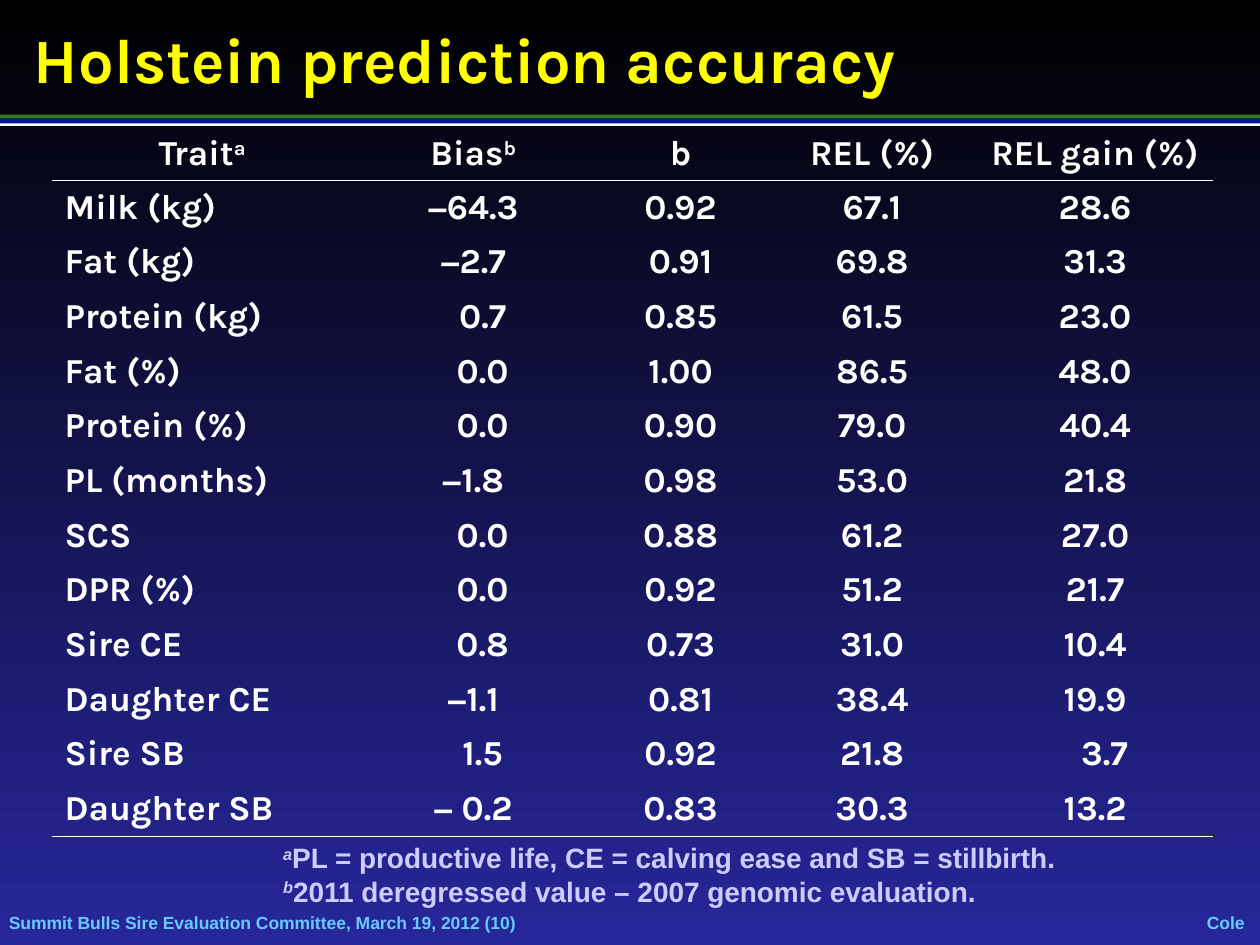
from lxml import etree
from pptx import Presentation
from pptx.dml.color import RGBColor
from pptx.enum import shapes, text
from pptx.oxml import ns
from pptx.util import Cm, Pt

# Content: "^x" at the start of a run marks a superscript
TITLE = "Holstein prediction accuracy"
HEADS = [["Trait", "^a"], ["Bias", "^b"], ["b"], ["REL (%)"], ["REL gain (%)"]]
ROWS = [
    ("Milk (kg)", "−64.3", "0.92", "67.1", "28.6"),
    ("Fat (kg)", "−2.7", "0.91", "69.8", "31.3"),
    ("Protein (kg)", "0.7", "0.85", "61.5", "23.0"),
    ("Fat (%)", "0.0", "1.00", "86.5", "48.0"),
    ("Protein (%)", "0.0", "0.90", "79.0", "40.4"),
    ("PL (months)", "−1.8", "0.98", "53.0", "21.8"),
    ("SCS", "0.0", "0.88", "61.2", "27.0"),
    ("DPR (%)", "0.0", "0.92", "51.2", "21.7"),
    ("Sire CE", "0.8", "0.73", "31.0", "10.4"),
    ("Daughter CE", "−1.1", "0.81", "38.4", "19.9"),
    ("Sire SB", "1.5", "0.92", "21.8", "3.7"),
    ("Daughter SB", "− 0.2", "0.83", "30.3", "13.2"),
]
NOTES = [
    ["^a", "PL = productive life, CE = calving ease and SB = stillbirth."],
    ["^b", "2011 deregressed value – 2007 genomic evaluation."],
]
EVENT = "Summit Bulls Sire Evaluation Committee, March 19, 2012 (10)"
AUTHOR = "Cole"

COLORS = {
    "top": "000000", "base": "27279B", "title": "FFFF00", "cell": "FFFFFF",
    "note": "CCCCFF", "foot": "66CCFF",
    "green": "2A7E00", "white": "FFFFFF", "blue": "001799",
}
BANDS = [("green", 2.31, 0.08), ("white", 2.46, 0.08), ("blue", 2.39, 0.1)]
WIDTHS = [6.05, 4.88, 3.48, 4.24, 4.75]
ROW_H = 1.1
SHIFT = 0.38  # left indent that lines up unsigned and one-digit values
PLAIN = "{2D5ABB26-0587-4C30-8999-92F81FD0307C}"
LEFT, MID = text.PP_ALIGN.LEFT, text.PP_ALIGN.CENTER
BOTTOM, CENTER = text.MSO_ANCHOR.BOTTOM, text.MSO_ANCHOR.MIDDLE


def rgb(name):
    return RGBColor.from_string(COLORS[name])


def write(frame, paras, size, color, font="Arial", align=LEFT, indent=0,
          slant=False):
    """Fill a text frame; each paragraph is a list of runs."""
    for i, runs in enumerate(paras):
        para = frame.paragraphs[0] if i == 0 else frame.add_paragraph()
        para.alignment = align
        if indent:
            para._p.get_or_add_pPr().set("marL", str(Cm(indent)))
        for part in runs:
            run = para.add_run()
            run.text = part.lstrip("^")
            run.font.size, run.font.name = Pt(size), font
            run.font.bold, run.font.color.rgb = True, rgb(color)
            if part.startswith("^"):
                run.font.italic = slant
                run._r.get_or_add_rPr().set("baseline", "30000")


def add_box(slide, box, inset=None):
    frame = slide.shapes.add_textbox(*map(Cm, box)).text_frame
    frame.word_wrap, frame.vertical_anchor = True, CENTER
    if inset is not None:
        frame.margin_left = frame.margin_right = Cm(inset)
        frame.margin_top = frame.margin_bottom = Cm(inset)
    return frame


def rule(cell):
    """Draw a thin line under a cell."""
    line = etree.Element(ns.qn("a:lnB"), w=str(Pt(1)))
    fill = etree.SubElement(line, ns.qn("a:solidFill"))
    etree.SubElement(fill, ns.qn("a:srgbClr"), val=COLORS["white"])
    cell._tc.get_or_add_tcPr().insert(0, line)


def add_grid(slide):
    count = len(ROWS) + 1
    frame = slide.shapes.add_table(count, len(WIDTHS), Cm(1.05), Cm(2.54),
                                   Cm(sum(WIDTHS)), Cm(ROW_H * count))
    grid = frame.table
    grid.first_row = grid.horz_banding = False
    grid._tbl.tblPr.find(ns.qn("a:tableStyleId")).text = PLAIN
    for col, width in zip(grid.columns, WIDTHS):
        col.width = Cm(width)
    for row in grid.rows:
        row.height = Cm(ROW_H)
    lines = [HEADS] + [[[val] for val in row] for row in ROWS]
    for r, line in enumerate(lines):
        for c, runs in enumerate(line):
            cell = grid.cell(r, c)
            cell.fill.background()
            if r == 0:
                cell.vertical_anchor = BOTTOM
            val = runs[0]
            moved = r > 0 and (c == 1 and val[0] != "−"
                               or c == 4 and len(val) == 3)
            write(cell.text_frame, [runs], 20, "cell", font="Karla",
                  align=LEFT if r and c == 0 else MID,
                  indent=SHIFT if moved else 0)
            if r in (0, count - 1):
                rule(cell)


def main():
    deck = Presentation()
    deck.slide_width, deck.slide_height = Cm(25.4), Cm(19.05)
    slide = deck.slides.add_slide(deck.slide_layouts[5])

    # Background
    back = slide.background.fill
    back.gradient()
    back.gradient_angle = 270
    for stop, name, pos in zip(back.gradient_stops, ("top", "base"), (0, 1)):
        stop.color.rgb, stop.position = rgb(name), pos

    # Footer
    write(add_box(slide, (0.18, 18.39, 20.55, 0.43), inset=0), [[EVENT]],
          10, "foot")
    write(add_box(slide, (24.21, 18.39, 1, 0.43), inset=0), [[AUTHOR]],
          10, "foot", align=MID)

    # Bands under the title
    for name, top, high in BANDS:
        band = slide.shapes.add_shape(shapes.MSO_SHAPE.RECTANGLE, 0, Cm(top),
                                      deck.slide_width, Cm(high))
        band.shadow.inherit = False
        band.fill.solid()
        band.fill.fore_color.rgb = rgb(name)
        band.line.fill.background()

    # Table and its notes
    add_grid(slide)
    write(add_box(slide, (5.46, 16.81, 16.21, 1.63)), NOTES, 16, "note",
          slant=True)

    # Title
    title = slide.shapes.title
    title.left, title.top, title.width, title.height = map(
        Cm, (0.43, 0.28, 24.54, 1.78))
    frame = title.text_frame
    frame.auto_size, frame.vertical_anchor = text.MSO_AUTO_SIZE.NONE, BOTTOM
    write(frame, [[TITLE]], 36, "title", font="Karla")

    deck.save("out.pptx")


if __name__ == "__main__":
    main()
